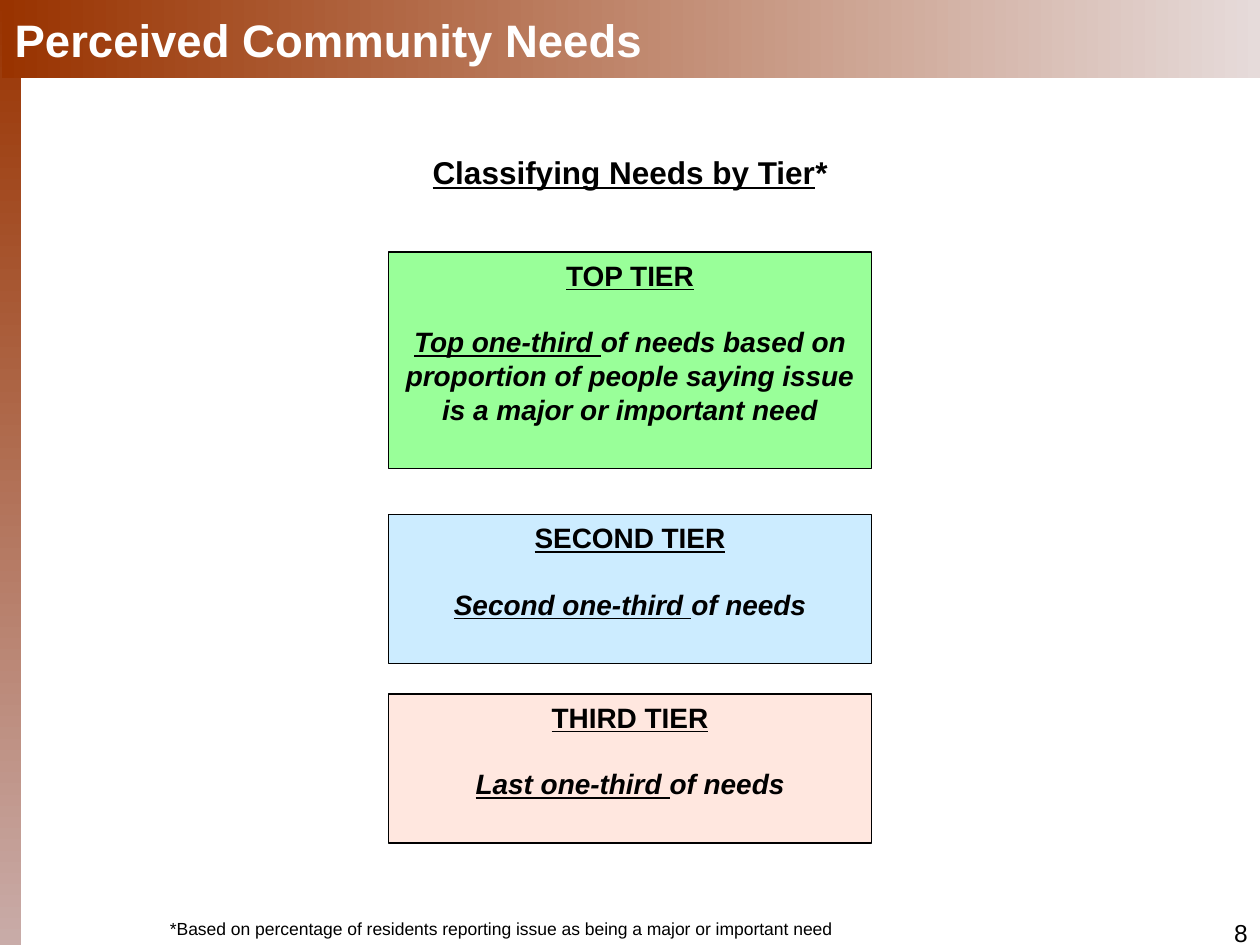
from pptx import Presentation
from pptx import util as u
from pptx.dml import color
from pptx.enum import shapes, text

CELL = u.Inches(1) / 12  # the grid has 120 columns and 90 rows
FONT = "Arial"
LEFT, MID, RIGHT = text.PP_ALIGN.LEFT, text.PP_ALIGN.CENTER, text.PP_ALIGN.RIGHT


def rgb(code):
    return color.RGBColor.from_string(code)


def grid(*box):
    return [round(n * CELL) for n in box]


def fade(shape, start, end, angle):
    shape.fill.gradient()
    shape.fill.gradient_angle = angle
    for stop, code in zip(shape.fill.gradient_stops, (start, end)):
        stop.color.rgb = rgb(code)


def add_run(para, words, size, ink="000000", bold=False, line=False, slant=False):
    run = para.add_run()
    run.text = words
    font = run.font
    font.name, font.size, font.color.rgb = FONT, u.Pt(size), rgb(ink)
    font.bold, font.underline, font.italic = bold, line, slant


def add_rect(slide, box):
    rect = slide.shapes.add_shape(shapes.MSO_SHAPE.RECTANGLE, *grid(*box))
    rect.shadow.inherit = False
    return rect


def add_label(slide, box, align):
    frame = slide.shapes.add_textbox(*grid(*box)).text_frame
    frame.word_wrap = True
    para = frame.paragraphs[0]
    para.alignment = align
    return para


def add_side(slide, box):
    bar = add_rect(slide, box)
    fade(bar, "993300", "C9ACA9", 270)
    bar.line.fill.background()


def add_title(slide, box, words):
    title = slide.shapes.title
    title.left, title.top, title.width, title.height = grid(*box)
    fade(title, "993300", "E6DBDA", 0)
    slide.shapes._spTree.append(title._element)  # above the side bar
    frame = title.text_frame
    frame.auto_size = text.MSO_AUTO_SIZE.NONE
    frame.vertical_anchor = text.MSO_ANCHOR.MIDDLE
    para = frame.paragraphs[0]
    para.alignment = LEFT
    add_run(para, words, 26, "FFFFFF", bold=True)


def add_tier(slide, box, fill, name, share, rest):
    rect = add_rect(slide, box)
    rect.fill.solid()
    rect.fill.fore_color.rgb = rgb(fill)
    rect.line.color.rgb = rgb("000000")
    rect.line.width = u.Pt(0.75)
    frame = rect.text_frame
    frame.word_wrap = True
    frame.vertical_anchor = text.MSO_ANCHOR.TOP
    head, body = frame.paragraphs[0], frame.add_paragraph()
    head.alignment = body.alignment = MID
    body.space_before = u.Pt(19)
    add_run(head, name, 16, bold=True, line=True)
    add_run(body, share, 16, bold=True, line=True, slant=True)
    add_run(body, rest, 16, bold=True, slant=True)


def main():
    deck = Presentation()
    deck.slide_width, deck.slide_height = grid(120, 90)
    slide = deck.slides.add_slide(deck.slide_layouts[5])

    # Frame of the slide
    add_side(slide, (0, 0, 2, 90.6))
    add_title(slide, (0.2, 0, 119.8, 7.4), "Perceived Community Needs")
    add_run(add_label(slide, (92, 86.8, 28, 6.2), RIGHT), "8", 14)

    # Heading
    head = add_label(slide, (31, 14, 58, 4.8), MID)
    add_run(head, "Classifying Needs by Tier", 18, bold=True, line=True)
    add_run(head, "*", 18, bold=True)

    # Tiers: top row, height, fill, words
    tiers = [
        (24, 20.6, "99FF99", "TOP TIER", "Top one-third ",
         "of needs based on proportion of people saying issue "
         "is a major or important need"),
        (49, 14.2, "CCECFF", "SECOND TIER", "Second one-third ", "of needs"),
        (66.1, 14.2, "FFE7DF", "THIRD TIER", "Last one-third ", "of needs"),
    ]
    for top, tall, *look in tiers:
        add_tier(slide, (37, top, 46, tall), *look)

    # Footnote
    note = add_label(slide, (15, 86.8, 102, 3.2), LEFT)
    add_run(note, "*Based on percentage of residents reporting issue "
                  "as being a major or important need", 10)

    deck.save("out.pptx")


if __name__ == "__main__":
    main()
